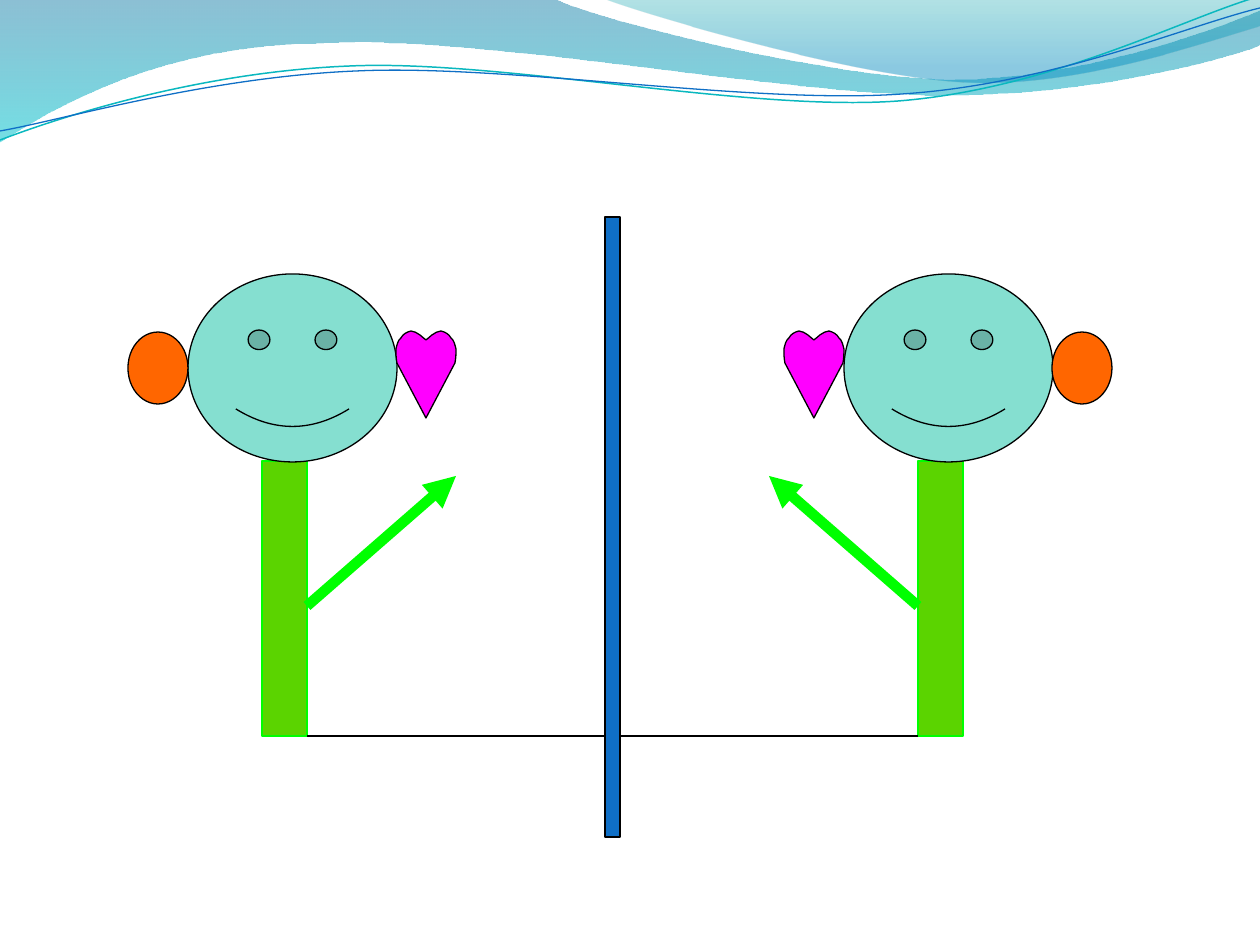
import pptx
import pptx.dml.color
import pptx.enum.shapes
import pptx.oxml
import pptx.oxml.ns
import pptx.util

RGBColor = pptx.dml.color.RGBColor
Shape = pptx.enum.shapes.MSO_SHAPE

BLACK = RGBColor(0x00, 0x00, 0x00)
BLUE = RGBColor(0x0F, 0x6F, 0xC6)
TEAL = RGBColor(0x0A, 0xB8, 0xBF)
LIME = RGBColor(0x00, 0xFF, 0x00)
GREEN = RGBColor(0x5B, 0xD4, 0x00)
MINT = RGBColor(0x85, 0xDF, 0xD0)
ORANGE = RGBColor(0xFF, 0x66, 0x00)
MAGENTA = RGBColor(0xFF, 0x00, 0xFF)
DEEP_BLUE = RGBColor(0x00, 0x74, 0xA1)
CYAN = RGBColor(0x00, 0xC6, 0xCF)
SEA = RGBColor(0x00, 0xA1, 0xA9)
SKY = RGBColor(0x00, 0x8B, 0xBF)

SCALE = 914400 / 126
WALL_LEFT, WALL_RIGHT = 605, 620
STUMP_TOP, FLOOR = 461, 736

BROAD_WAVE = [(0, -1), (554, -1), (600, 21, 837, 79, 955, 79),
              (1075, 79, 1207, 33, 1260, 11), (1261, 45),
              (1239, 55, 1096, 96, 940, 95), (784, 95, 481, 35, 324, 43),
              (163, 44, 58, 105, -1, 142)]
CORNER_WAVE = [(604, -1), (641, 14, 859, 78, 969, 82),
               (1079, 87, 1211, 40, 1260, 26), (1260, 0)]
TEAL_RIPPLE = [(0, 140), (60, 117, 199, 72, 349, 66),
               (498, 59, 747, 112, 898, 101), (1050, 89, 1182, 19, 1257, -3)]
BLUE_RIPPLE = [(0, 131), (59, 121, 207, 77, 357, 71),
               (508, 64, 752, 105, 903, 94), (1053, 84, 1186, 26, 1260, 8)]
HEART = [(0, 340), (-1, 339, -4, 337, -6, 335), (-9, 333, -12, 331, -15, 331),
         (-19, 332, -23, 334, -25, 338), (-28, 340, -29, 345, -30, 349),
         (-30, 354, -30, 358, -29, 363), (0, 418), (29, 363),
         (30, 358, 30, 354, 30, 349), (29, 345, 28, 340, 25, 338),
         (23, 334, 19, 332, 15, 331), (12, 331, 9, 333, 6, 335),
         (4, 337, 1, 339, 0, 340)]


def emu(px):
    return round(px * SCALE)


def add_child(parent, tag, **attributes):
    child = pptx.oxml.parse_xml(f"<{tag} {pptx.oxml.ns.nsdecls('a')}/>")
    for name, value in attributes.items():
        child.set(name, str(value))
    parent.append(child)
    return child


class Painter:
    """Draws styled elements on the current slide."""

    def __init__(self, page, line_color=BLACK, line_width=0.75):
        self.page = page
        self.line_color = line_color
        self.line_width = line_width

    def stroke(self, item, color=None, width=None):
        item.line.color.rgb = color or self.line_color
        item.line.width = pptx.util.Pt(width or self.line_width)

    def preset(self, kind, left, top, width, height, fill, line=None):
        item = self.page.shapes.add_shape(kind, emu(left), emu(top), emu(width), emu(height))
        item.shadow.inherit = False
        item.fill.solid()
        item.fill.fore_color.rgb = fill
        self.stroke(item, line)

    def outline(self, path, close=True, shift=0):
        pieces = [[(emu(x + shift), emu(y)) for x, y in zip(piece[::2], piece[1::2])]
                  for piece in path]
        builder = self.page.shapes.build_freeform(*pieces[0][0], scale=1.0)
        builder.add_line_segments([piece[-1] for piece in pieces[1:]], close=close)
        item = builder.convert_to_shape()
        item.shadow.inherit = False
        segments = list(item._element.iter(pptx.oxml.ns.qn("a:lnTo")))
        for segment, piece in zip(segments, pieces[1:]):
            if len(piece) == 3:
                curve = add_child(segment.getparent(), "a:cubicBezTo")
                for x, y in piece:
                    add_child(curve, "a:pt", x=x - item.left, y=y - item.top)
                segment.getparent().replace(segment, curve)
        return item

    def wave(self, path, stops):
        item = self.outline(path)
        item.line.fill.background()
        item.fill.gradient()
        item.fill.gradient_angle = 270
        for stop, (position, color, _) in zip(item.fill.gradient_stops, stops):
            stop.position = position
            stop.color.rgb = color
        colors = item._element.spPr.findall(".//" + pptx.oxml.ns.qn("a:srgbClr"))
        for element, (_, _, opacity) in zip(colors, stops):
            add_child(element, "a:alpha", val=opacity * 1000)

    def ripple(self, path, color, width):
        item = self.outline(path, close=False)
        item.fill.background()
        self.stroke(item, color, width)

    def heart(self, center):
        item = self.outline(HEART, shift=center)
        item.fill.solid()
        item.fill.fore_color.rgb = MAGENTA
        self.stroke(item)

    def line(self, start, end, color=None, width=None, arrow=False):
        item = self.page.shapes.add_connector(
            pptx.enum.shapes.MSO_CONNECTOR.STRAIGHT, *map(emu, start + end))
        self.stroke(item, color, width)
        if arrow:
            add_child(item.line._get_or_add_ln(), "a:tailEnd", type="triangle")
        add_child(item._element.spPr, "a:effectLst")

    def figure(self, center, side):
        stump_left, stump_width = center - 30, 45
        inner = stump_left + stump_width if side > 0 else stump_left
        self.preset(Shape.RECTANGLE, stump_left, STUMP_TOP, stump_width,
                    FLOOR - STUMP_TOP, GREEN, LIME)
        self.preset(Shape.SMILEY_FACE, center - 104, 274, 209, 188, MINT)
        self.line((inner, 606), (inner + side * 149, 476), LIME, 6, arrow=True)
        self.preset(Shape.OVAL, center - side * 134 - 30, 332, 60, 72, ORANGE)
        self.heart(center + side * 134)
        return inner


def main():
    deck = pptx.Presentation()
    deck.slide_width, deck.slide_height = emu(1260), emu(945)
    painter = Painter(deck.slides.add_slide(deck.slide_layouts[6]))
    painter.wave(BROAD_WAVE, [(0, DEEP_BLUE, 45), (1, CYAN, 55)])
    painter.wave(CORNER_WAVE, [(0, SEA, 30), (0.8, SKY, 45)])
    painter.ripple(TEAL_RIPPLE, TEAL, 0.85)
    painter.ripple(BLUE_RIPPLE, BLUE, 0.75)
    painter.preset(Shape.RECTANGLE, WALL_LEFT, 217, WALL_RIGHT - WALL_LEFT, 620, BLUE)
    left_inner = painter.figure(292, 1)
    right_inner = painter.figure(948, -1)
    painter.line((left_inner, FLOOR), (WALL_LEFT, FLOOR))
    painter.line((WALL_RIGHT, FLOOR), (right_inner, FLOOR))
    deck.save("out.pptx")


if __name__ == "__main__":
    main()
